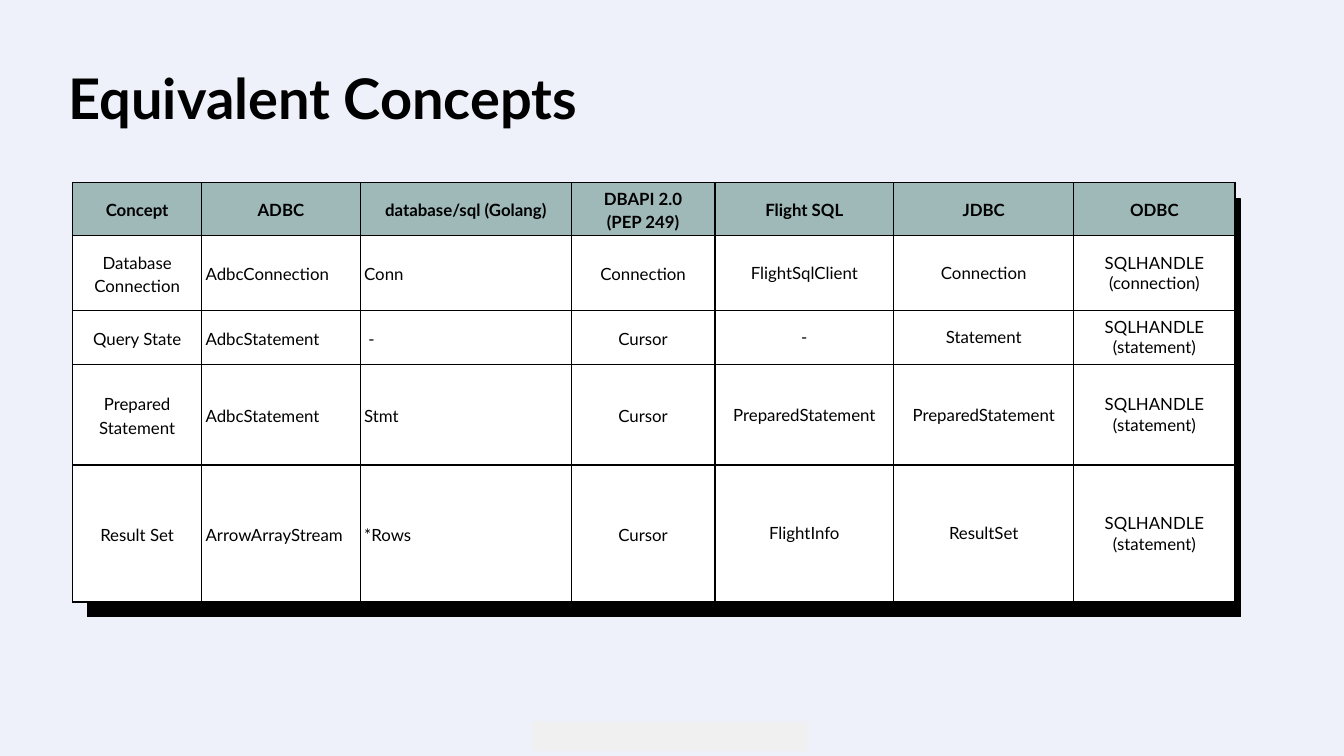
from lxml import etree
from pptx import Presentation
from pptx.dml.color import RGBColor
from pptx.enum import shapes, text
from pptx.oxml.ns import qn
from pptx.util import Inches, Pt

FONT = "Lato"
BLACK, WHITE = "000000", "FFFFFF"
BACKDROP, HEADER, FOOTER = "EEF1F9", "9FB8B8", "F0F0F0"

SLIDE_WIDTH = 10
SLIDE_HEIGHT = SLIDE_WIDTH * 9 / 16
COLUMN_WIDTHS = [0.96, 1.18, 1.57, 1.07, 1.33, 1.34, 1.2]
ROW_HEIGHTS = [0.39, 0.56, 0.4, 0.75, 1.02]
LEFT_COLUMNS = (1, 2)   # body text aligned left
LOOSE_COLUMNS = 4       # leading columns with wider line spacing
CONCEPTS = [
    ["Concept", "ADBC", "database/sql (Golang)", "DBAPI 2.0\n(PEP 249)",
     "Flight SQL", "JDBC", "ODBC"],
    ["Database Connection", "AdbcConnection", "Conn", "Connection",
     "FlightSqlClient", "Connection", "SQLHANDLE\n(connection)"],
    ["Query State", "AdbcStatement", " -", "Cursor",
     "-", "Statement", "SQLHANDLE\n(statement)"],
    ["Prepared Statement", "AdbcStatement", "Stmt", "Cursor",
     "PreparedStatement", "PreparedStatement", "SQLHANDLE\n(statement)"],
    ["Result Set", "ArrowArrayStream", "*Rows", "Cursor",
     "FlightInfo", "ResultSet", "SQLHANDLE\n(statement)"],
]


def paint(fill, color):
    fill.solid()
    fill.fore_color.rgb = RGBColor.from_string(color)


def style_font(font, size, bold):
    font.name, font.size, font.bold = FONT, Pt(size), bold
    font.color.rgb = RGBColor.from_string(BLACK)


def add_block(slide, left, top, width, height, color, outlined=False):
    block = slide.shapes.add_shape(
        shapes.MSO_SHAPE.RECTANGLE,
        Inches(left), Inches(top), Inches(width), Inches(height))
    block.shadow.inherit = False
    paint(block.fill, color)
    if outlined:
        paint(block.line.fill, color)
        block.line.width = Pt(0.75)
    else:
        block.line.fill.background()


def add_borders(cell):
    properties = cell._tc.get_or_add_tcPr()
    for index, side in enumerate(("lnL", "lnR", "lnT", "lnB")):
        border = etree.Element(qn(f"a:{side}"), w=str(Pt(0.75)))
        fill = etree.SubElement(border, qn("a:solidFill"))
        etree.SubElement(fill, qn("a:srgbClr"), val=BLACK)
        properties.insert(index, border)


def fill_cell(cell, wording, row, column):
    header = row == 0
    cell.margin_left = cell.margin_right = Inches(0.03)
    cell.margin_top = cell.margin_bottom = Inches(0.02)
    cell.vertical_anchor = text.MSO_ANCHOR.MIDDLE
    cell.text = wording
    for paragraph in cell.text_frame.paragraphs:
        style_font(paragraph.font, 9, header)
        left = column in LEFT_COLUMNS and not header
        paragraph.alignment = text.PP_ALIGN.LEFT if left else text.PP_ALIGN.CENTER
        paragraph.line_spacing = 1.15 if header or column < LOOSE_COLUMNS else 1.0
    paint(cell.fill, HEADER if header else WHITE)
    add_borders(cell)


def add_title(slide, left, top, width, height):
    title = slide.shapes.title
    title.left, title.top = Inches(left), Inches(top)
    title.width, title.height = Inches(width), Inches(height)
    frame = title.text_frame
    frame.text = "Equivalent Concepts"
    frame.margin_left = frame.margin_right = 0
    frame.margin_top = frame.margin_bottom = 0
    frame.vertical_anchor = text.MSO_ANCHOR.TOP
    frame.auto_size = text.MSO_AUTO_SIZE.SHAPE_TO_FIT_TEXT
    heading = frame.paragraphs[0]
    heading.alignment = text.PP_ALIGN.LEFT
    style_font(heading.font, 30, True)


def add_concept_table(slide, left, top):
    # Hard shadow behind the table
    add_block(slide, left + 0.11, top + 0.12, 8.58, 3.11, BLACK, outlined=True)

    # Grid
    table = slide.shapes.add_table(
        len(ROW_HEIGHTS), len(COLUMN_WIDTHS), Inches(left), Inches(top),
        Inches(sum(COLUMN_WIDTHS)), Inches(sum(ROW_HEIGHTS))).table
    for column, width in zip(table.columns, COLUMN_WIDTHS):
        column.width = Inches(width)
    for row, height in zip(table.rows, ROW_HEIGHTS):
        row.height = Inches(height)

    # Wording
    for r, concept in enumerate(CONCEPTS):
        for c, wording in enumerate(concept):
            fill_cell(table.cell(r, c), wording, r, c)


def main():
    deck = Presentation()
    deck.slide_width, deck.slide_height = Inches(SLIDE_WIDTH), Inches(SLIDE_HEIGHT)
    slide = deck.slides.add_slide(deck.slide_layouts[5])
    paint(slide.background.fill, BACKDROP)

    add_title(slide, 0.51, 0.47, 8.87, 0.5)
    add_concept_table(slide, 0.54, 1.36)
    # Footer patch
    add_block(slide, 3.96, 5.37, 2.05, 0.22, FOOTER)

    deck.save("out.pptx")


if __name__ == "__main__":
    main()
